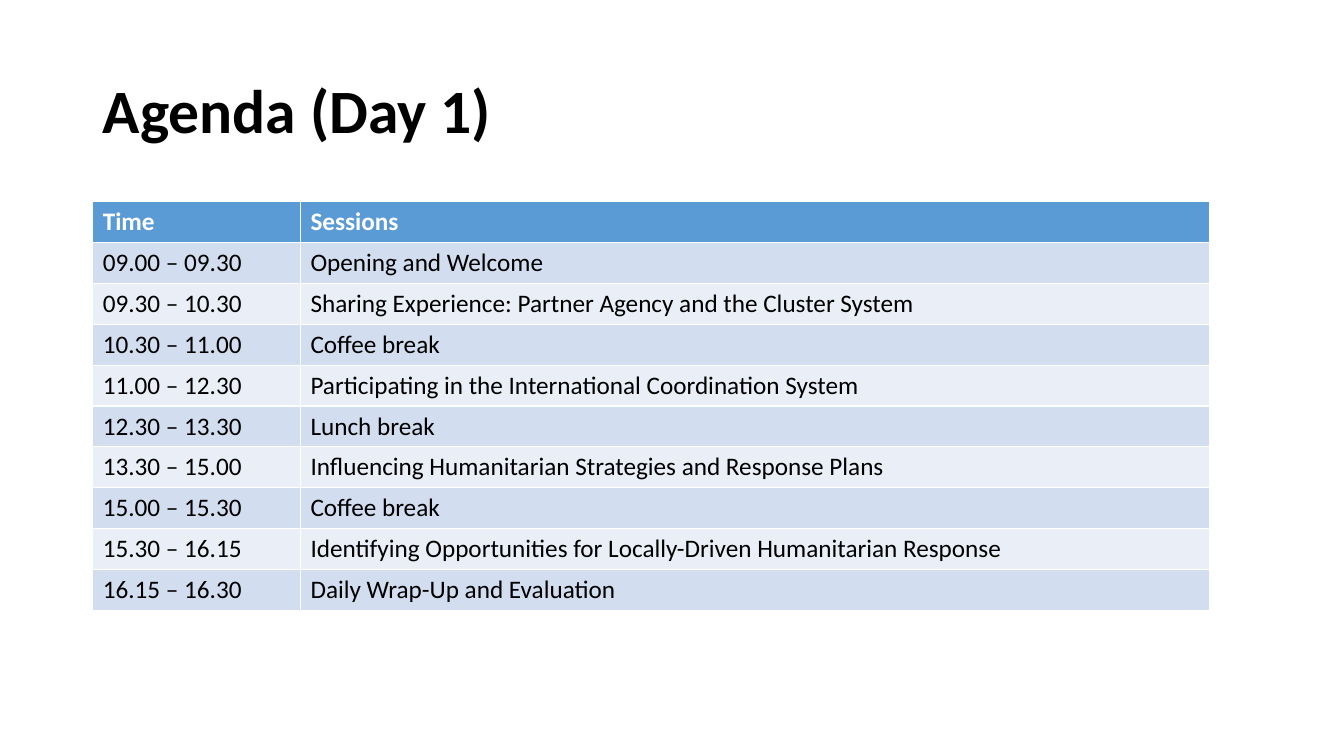
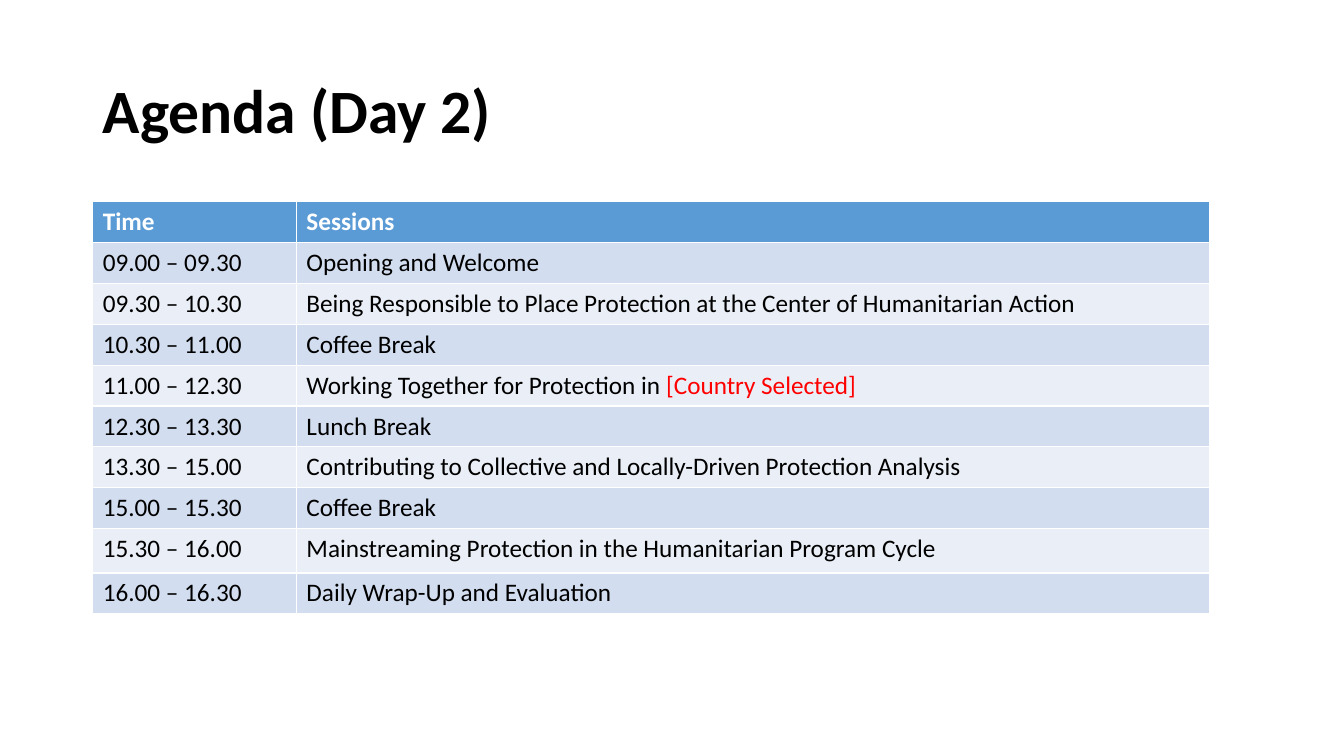
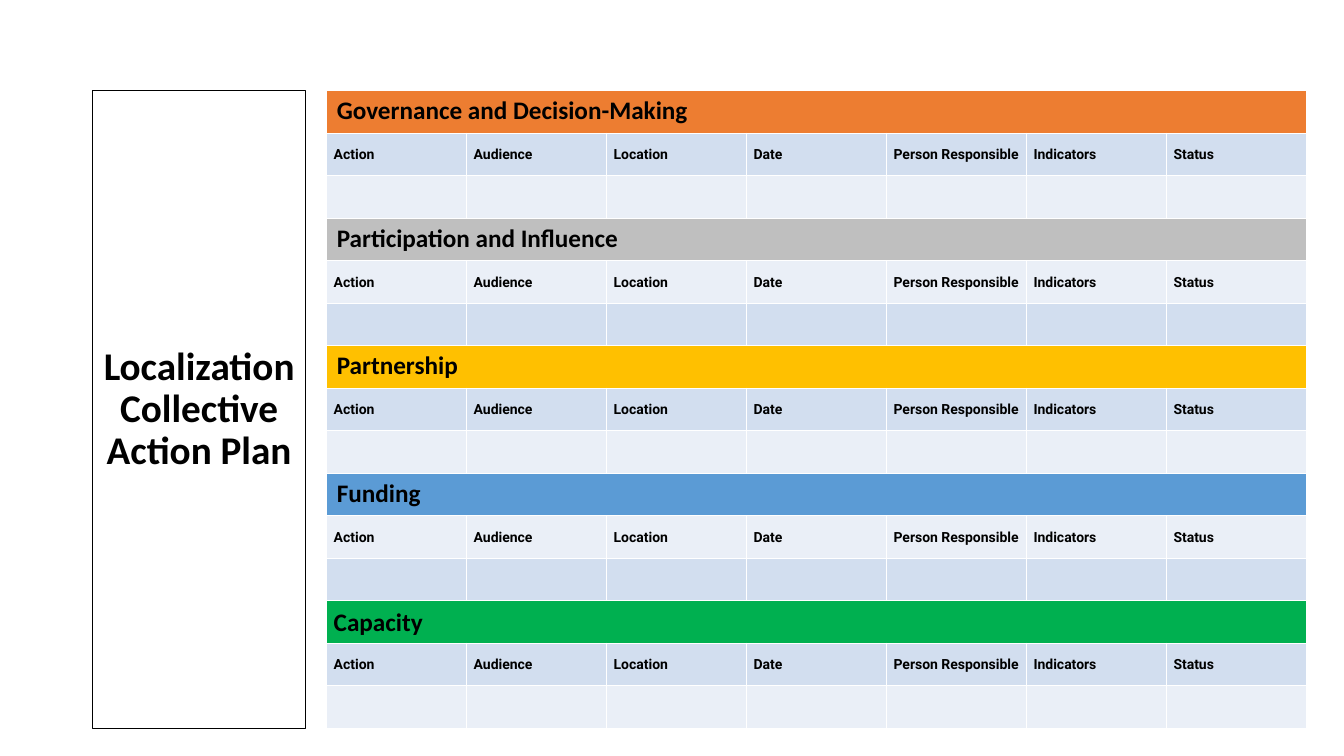
from dataclasses import dataclass

from pptx import Presentation
from pptx.dml.color import RGBColor
from pptx.enum.text import MSO_ANCHOR, MSO_AUTO_SIZE, PP_ALIGN
from pptx.util import Inches, Pt

LEFT, CENTER = PP_ALIGN.LEFT, PP_ALIGN.CENTER
MIDDLE = MSO_ANCHOR.MIDDLE
NO_FIT = MSO_AUTO_SIZE.NONE

BLACK = RGBColor(0x00, 0x00, 0x00)
WHITE = RGBColor(0xFF, 0xFF, 0xFF)
RED = RGBColor(0xFF, 0x00, 0x00)
BLUE = RGBColor(0x5B, 0x9B, 0xD5)
ORANGE = RGBColor(0xED, 0x7D, 0x31)
GRAY = RGBColor(0xBF, 0xBF, 0xBF)
GOLD = RGBColor(0xFF, 0xC0, 0x00)
GREEN = RGBColor(0x00, 0xB0, 0x50)
BANDS = (RGBColor(0xEA, 0xEF, 0xF7), RGBColor(0xD2, 0xDE, 0xEF))

FONT, SMALL = "Calibri", "Roboto"
TITLE_ONLY = 5
EDGE = 0.92


@dataclass(frozen=True)
class Box:
    left: float
    top: float
    width: float
    height: float

    def lengths(self) -> tuple:
        return tuple(Inches(v) for v in
                     (self.left, self.top, self.width, self.height))


@dataclass(frozen=True)
class Agenda:
    title: str
    split: float  # width of the time column
    rows: tuple[tuple[str, str], ...]
    tall: dict[int, float]  # row heights that differ from the rest


@dataclass(frozen=True)
class Theme:
    name: str
    fill: RGBColor
    tight: bool = False


HEAD_BOX = Box(EDGE, 0.4, 11.5, 1.45)
DAY_BOX = Box(EDGE, 2, 11.08, 4.05)
SIDE_BOX = Box(EDGE, 0.9, 2.11, 6.33)
PLAN_BOX = Box(3.24, 0.9, 9.72, 6.33)

DAYS = (
    Agenda("Agenda (Day 1)", 2.06, (
        ("09.00 – 09.30", "Opening and Welcome"),
        ("09.30 – 10.30",
         "Sharing Experience: Partner Agency and the Cluster System"),
        ("10.30 – 11.00", "Coffee break"),
        ("11.00 – 12.30",
         "Participating in the International Coordination System"),
        ("12.30 – 13.30", "Lunch break"),
        ("13.30 – 15.00",
         "Influencing Humanitarian Strategies and Response Plans"),
        ("15.00 – 15.30", "Coffee break"),
        ("15.30 – 16.15",
         "Identifying Opportunities for Locally-Driven Humanitarian Response"),
        ("16.15 – 16.30", "Daily Wrap-Up and Evaluation"),
    ), {}),
    Agenda("Agenda (Day 2)", 2.02, (
        ("09.00 – 09.30", "Opening and Welcome"),
        ("09.30 – 10.30", "Being Responsible to Place Protection at the "
                          "Center of Humanitarian Action"),
        ("10.30 – 11.00", "Coffee Break"),
        ("11.00 – 12.30",
         "Working Together for Protection in [Country Selected]"),
        ("12.30 – 13.30", "Lunch Break"),
        ("13.30 – 15.00",
         "Contributing to Collective and Locally-Driven Protection Analysis"),
        ("15.00 – 15.30", "Coffee Break"),
        ("15.30 – 16.00",
         "Mainstreaming Protection in the Humanitarian Program Cycle"),
        ("16.00 – 16.30", "Daily Wrap-Up and Evaluation"),
    ), {8: 0.44}),
)

THEMES = (
    Theme("Governance and Decision-Making", ORANGE),
    Theme("Participation and Influence", GRAY),
    Theme("Partnership", GOLD),
    Theme("Funding", BLUE),
    Theme("Capacity", GREEN, tight=True),
)
FIELDS = ("Action", "Audience", "Location", "Date", "Person Responsible",
          "Indicators", "Status")


def style(para, size: float, color: RGBColor, bold: bool,
          face: str = FONT) -> None:
    font = para.font
    font.name, font.size, font.bold = face, Pt(size), bold
    font.color.rgb = color


def add_title(slide, text: str, box: Box, size: float, align):
    shape = slide.shapes.title
    shape.left, shape.top, shape.width, shape.height = box.lengths()
    frame = shape.text_frame
    frame.text = text
    frame.word_wrap, frame.auto_size = True, NO_FIT
    frame.vertical_anchor = MIDDLE
    para = frame.paragraphs[0]
    para.alignment, para.line_spacing = align, 0.9
    style(para, size, BLACK, True)
    return shape


def add_grid(slide, rows: int, cols: int, box: Box):
    """Add a table with equal rows and columns and banded fills."""
    grid = slide.shapes.add_table(rows, cols, *box.lengths()).table
    for i, row in enumerate(grid.rows):
        row.height = Inches(box.height / rows)
        for cell in row.cells:
            paint(cell, BANDS[i % 2])
    return grid


def paint(cell, color: RGBColor) -> None:
    cell.fill.solid()
    cell.fill.fore_color.rgb = color


def write(cell, text: str, color: RGBColor = BLACK, bold: bool = False,
          size: float = 18, face: str = FONT) -> None:
    """Fill a cell with text; a part in square brackets turns red."""
    para = cell.text_frame.paragraphs[0]
    style(para, size, color, bold, face)
    plain, mark, rest = text.partition("[")
    para.add_run().text = plain
    if mark:
        run = para.add_run()
        run.text = mark + rest
        run.font.color.rgb = RED


def tighten(cell) -> None:
    cell.vertical_anchor = MIDDLE
    cell.margin_left = cell.margin_right = Inches(0.07)
    cell.margin_top = cell.margin_bottom = 0
    cell.text_frame.paragraphs[0].line_spacing = 1.07


def add_day(slide, day: Agenda) -> None:
    add_title(slide, day.title, HEAD_BOX, 44, LEFT)
    grid = add_grid(slide, len(day.rows) + 1, 2, DAY_BOX)
    grid.columns[0].width = Inches(day.split)
    grid.columns[1].width = Inches(DAY_BOX.width - day.split)
    for i, height in day.tall.items():
        grid.rows[i].height = Inches(height)
    for col, text in enumerate(("Time", "Sessions")):
        paint(grid.cell(0, col), BLUE)
        write(grid.cell(0, col), text, WHITE, True)
    for i, row in enumerate(day.rows, 1):
        for col, text in enumerate(row):
            write(grid.cell(i, col), text)


def add_plan(slide) -> None:
    side = add_title(slide, "Localization Collective Action Plan",
                     SIDE_BOX, 28, CENTER)
    side.fill.solid()
    side.fill.fore_color.rgb = WHITE
    side.line.color.rgb = BLACK
    side.line.width = Pt(1)

    last = len(FIELDS) - 1
    grid = add_grid(slide, 3 * len(THEMES), len(FIELDS), PLAN_BOX)
    for i, theme in enumerate(THEMES):
        top = 3 * i
        head = grid.cell(top, 0)
        head.merge(grid.cell(top, last))
        paint(head, theme.fill)
        write(head, theme.name, bold=True)
        if theme.tight:
            tighten(head)
        for col, text in enumerate(FIELDS):
            cell = grid.cell(top + 1, col)
            write(cell, text, bold=True, size=10, face=SMALL)
            tighten(cell)


def main() -> None:
    deck = Presentation()
    deck.slide_width, deck.slide_height = Inches(13.33), Inches(7.5)
    layout = deck.slide_layouts[TITLE_ONLY]
    for day in DAYS:
        add_day(deck.slides.add_slide(layout), day)
    add_plan(deck.slides.add_slide(layout))
    deck.save("out.pptx")


if __name__ == "__main__":
    main()
